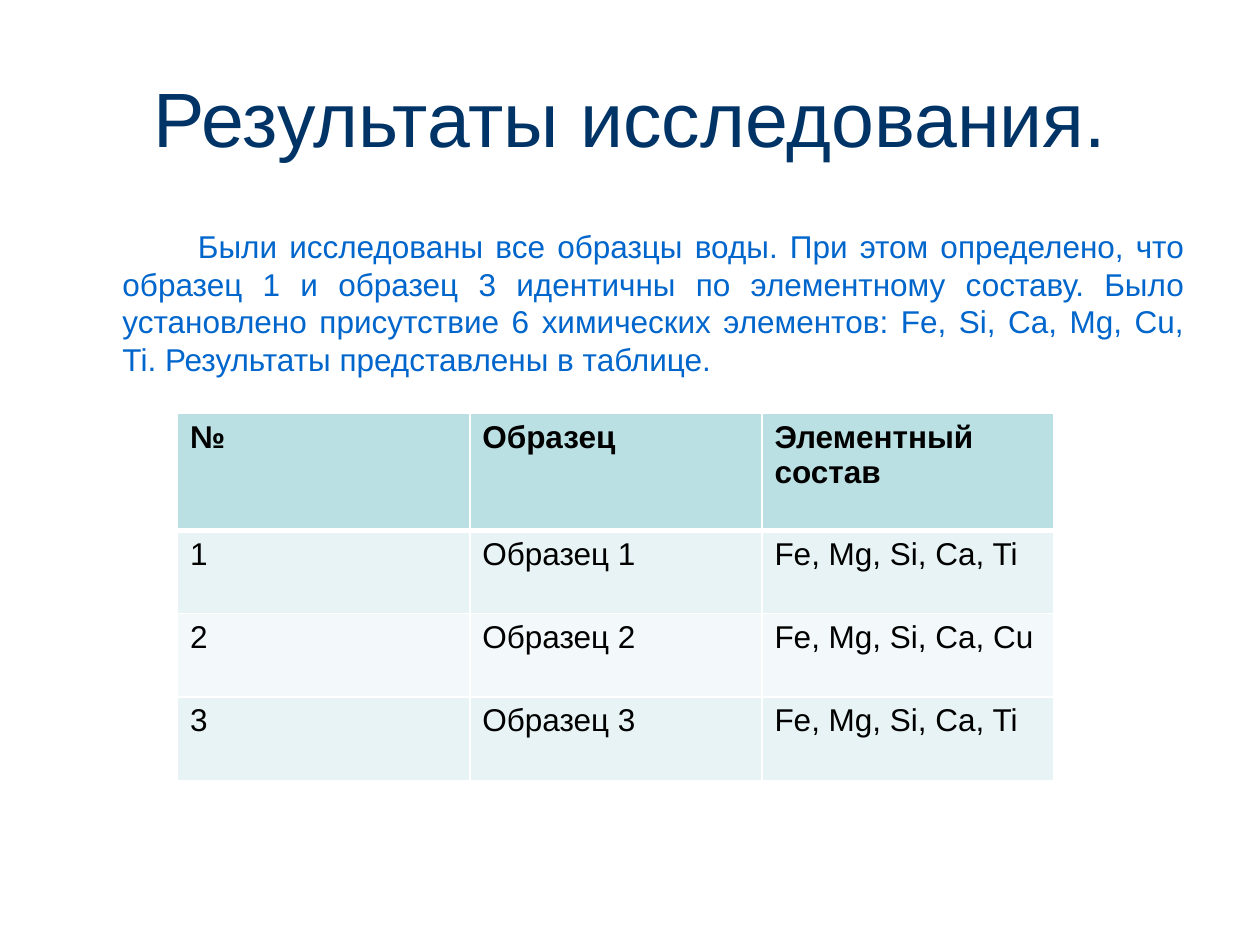
from lxml.etree import SubElement
from pptx import Presentation
from pptx.dml.color import RGBColor
from pptx.enum.text import MSO_ANCHOR as Anchor, PP_ALIGN as Align
from pptx.oxml.ns import qn
from pptx.util import Cm, Pt

HEADER = ["№", "Образец", "Элементный состав"]
SAMPLES = ["Fe, Mg, Si, Ca, Ti", "Fe, Mg, Si, Ca, Cu", "Fe, Mg, Si, Ca, Ti"]
FINDINGS = (
    "Были исследованы все образцы воды. При этом определено, что образец 1 "
    "и образец 3 идентичны по элементному составу. Было установлено "
    "присутствие 6 химических элементов: Fe, Si, Ca, Mg, Cu, Ti. "
    "Результаты представлены в таблице."
)


def color(value):
    return RGBColor.from_string(value)


class Page:
    """Holds the style and the current slide, and adds its elements."""

    font = "Arial"
    heading, accent, ink, border = "003366", "0066CC", "000000", "FFFFFF"
    header_fill, band_fills = "BBE0E3", ("E7F3F4", "F3F9FA")

    def __init__(self, deck):
        self.slide = deck.slides.add_slide(deck.slide_layouts[5])

    def format_text(self, para, size, tint, bold=False):
        for span in para.runs:
            span.font.name = self.font
            span.font.size = Pt(size)
            span.font.bold = bold
            span.font.color.rgb = color(tint)

    def add_title(self, text, left, top, width, height):
        title = self.slide.shapes.title
        title.left, title.top = Cm(left), Cm(top)
        title.width, title.height = Cm(width), Cm(height)
        frame = title.text_frame
        frame.text = text
        frame.vertical_anchor = Anchor.MIDDLE
        para = frame.paragraphs[0]
        para.alignment = Align.CENTER
        self.format_text(para, 44, self.heading)

    def add_paragraph(self, text, left, top, width, height, margin, indent):
        box = self.slide.shapes.add_textbox(Cm(left), Cm(top), Cm(width), Cm(height))
        frame = box.text_frame
        frame.word_wrap = True
        frame.text = text
        para = frame.paragraphs[0]
        para.alignment = Align.JUSTIFY
        properties = para._p.get_or_add_pPr()
        properties.set("marL", str(Cm(margin)))
        properties.set("indent", str(Cm(indent)))
        self.format_text(para, 18, self.accent)

    def set_borders(self, cell, **widths):
        properties = cell._tc.get_or_add_tcPr()
        for side in "LRTB":
            line = SubElement(properties, qn(f"a:ln{side}"), w=str(Pt(widths.get(side, 1))))
            fill = SubElement(line, qn("a:solidFill"))
            SubElement(fill, qn("a:srgbClr"), val=self.border)

    def add_table(self, rows, left, top, column_width, row_heights):
        width, height = column_width * len(rows[0]), sum(row_heights)
        shape = self.slide.shapes.add_table(
            len(rows), len(rows[0]), Cm(left), Cm(top), Cm(width), Cm(height))
        table = shape.table
        for column in table.columns:
            column.width = Cm(column_width)
        for index, (values, row_height) in enumerate(zip(rows, row_heights)):
            table.rows[index].height = Cm(row_height)
            is_header = index == 0
            tint = self.header_fill if is_header else self.band_fills[(index - 1) % 2]
            for cell, value in zip(table.rows[index].cells, values):
                cell.text = value
                self.format_text(cell.text_frame.paragraphs[0], 18, self.ink, is_header)
                self.set_borders(cell, T=3 if index == 1 else 1, B=3 if is_header else 1)
                cell.fill.solid()
                cell.fill.fore_color.rgb = color(tint)


def main():
    deck = Presentation()
    deck.slide_width, deck.slide_height = Cm(25.4), Cm(19.05)
    page = Page(deck)
    page.add_title("Результаты исследования.", 1.27, 0.76, 22.86, 3.18)
    page.add_paragraph(FINDINGS, 1.27, 4.45, 22.86, 12.57, margin=0.95, indent=1.52)
    rows = [HEADER] + [
        [str(number), f"Образец {number}", elements]
        for number, elements in enumerate(SAMPLES, 1)
    ]
    page.add_table(rows, 3.58, 8.33, 5.89, [2.36] + [1.68] * len(SAMPLES))
    deck.save("out.pptx")


if __name__ == "__main__":
    main()
